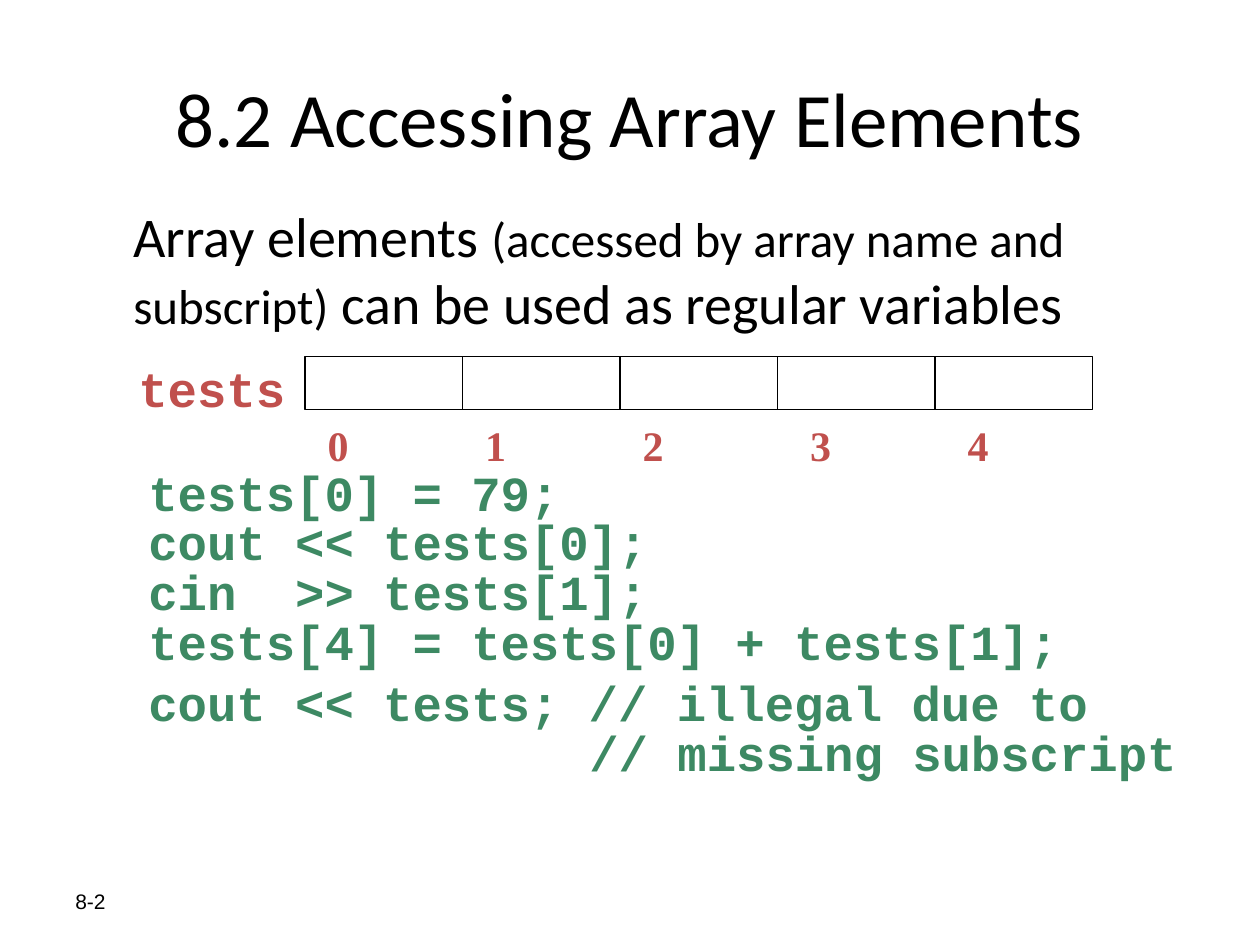
from lxml.etree import SubElement
from pptx import Presentation
from pptx.dml.color import RGBColor
from pptx.enum.shapes import MSO_SHAPE
from pptx.enum.text import MSO_ANCHOR, PP_ALIGN
from pptx.oxml.ns import qn
from pptx.util import Inches, Pt

COLORS = {"text": "000000", "label": "C0504D", "code": "3D8963"}
ARRAY_LEFT, ARRAY_TOP = 2.42, 2.83
CELL_WIDTH, CELL_HEIGHT = 1.25, 0.42
INDEX_STOPS = (1.33, 2.58, 3.91, 5.16)
COMMENT_INDENT = 3.5
# Each line of code: text, left indent in inches, space before in points
CODE = [
    ("tests[0] = 79;", 0, 0),
    ("cout << tests[0];", 0, 0),
    ("cin  >> tests[1];", 0, 0),
    ("tests[4] = tests[0] + tests[1];", 0, 0),
    ("cout << tests; // illegal due to", 0, 6.5),
    ("// missing subscript", COMMENT_INDENT, 0),
]


def style(span, font, size, color="text", bold=False):
    span.font.name = font
    span.font.size = Pt(size)
    span.font.bold = bold
    span.font.color.rgb = RGBColor.from_string(COLORS[color])


def add_text(page, left, top, width, height, text, font, size,
             color="text", bold=False, anchor=MSO_ANCHOR.TOP):
    """Add a wrapping text box and return its text frame."""
    box = page.shapes.add_textbox(
        Inches(left), Inches(top), Inches(width), Inches(height))
    frame = box.text_frame
    frame.word_wrap = True
    frame.vertical_anchor = anchor
    frame.text = text
    for para in frame.paragraphs:
        for span in para.runs:
            style(span, font, size, color, bold)
    return frame


def add_statement(page):
    frame = add_text(page, 0.96, 1.55, 8.62, 1.2, "Array elements ", "Calibri", 32)
    para = frame.paragraphs[0]
    for text, size in (("(accessed by array name and subscript)", 28),
                       (" can be used as regular variables", 32)):
        span = para.add_run()
        span.text = text
        style(span, "Calibri", size)


def add_array(page, count):
    for index in range(count):
        cell = page.shapes.add_shape(
            MSO_SHAPE.RECTANGLE,
            Inches(ARRAY_LEFT + index * CELL_WIDTH), Inches(ARRAY_TOP),
            Inches(CELL_WIDTH), Inches(CELL_HEIGHT))
        cell.shadow.inherit = False
        cell.fill.background()
        cell.line.color.rgb = RGBColor.from_string(COLORS["text"])
        cell.line.width = Pt(0.75)


def add_indexes(page, count):
    """Write the subscripts on one line, set apart by tab stops."""
    frame = add_text(page, ARRAY_LEFT, 3.28, count * CELL_WIDTH, 0.5,
                     "\t".join(str(index) for index in range(count)),
                     "Times New Roman", 24, "label", True)
    frame.margin_left = Inches(0.18)
    properties = frame.paragraphs[0]._p.get_or_add_pPr()
    stops = SubElement(properties, qn("a:tabLst"))
    for position in INDEX_STOPS:
        SubElement(stops, qn("a:tab"),
                   pos=str(Inches(position - 0.08)), algn="l")


def add_code(page):
    frame = add_text(page, 1.08, 3.69, 8.5, 2.6,
                     "\n".join(text for text, _, _ in CODE),
                     "Courier New", 28, "code", True)
    for para, (_, indent, space) in zip(frame.paragraphs, CODE):
        para.line_spacing = Pt(28.5)
        para.space_before = Pt(space)
        para._p.get_or_add_pPr().set("marL", str(Inches(indent)))


def main():
    deck = Presentation()
    deck.slide_width, deck.slide_height = Inches(10), Inches(7.5)
    page = deck.slides.add_slide(deck.slide_layouts[6])
    title = add_text(page, 0.5, 0.3, 9, 1.25, "8.2 Accessing Array Elements",
                     "Calibri", 44, anchor=MSO_ANCHOR.MIDDLE)
    title.paragraphs[0].alignment = PP_ALIGN.CENTER
    add_statement(page)
    add_code(page)
    add_text(page, 0.5, 6.95, 2.33, 0.4, "8-2", "Arial", 12,
             anchor=MSO_ANCHOR.MIDDLE)
    add_indexes(page, 5)
    add_array(page, 5)
    add_text(page, 1, 2.8, 1.42, 0.57, "tests", "Courier New", 28, "label", True)
    deck.save("out.pptx")


if __name__ == "__main__":
    main()
